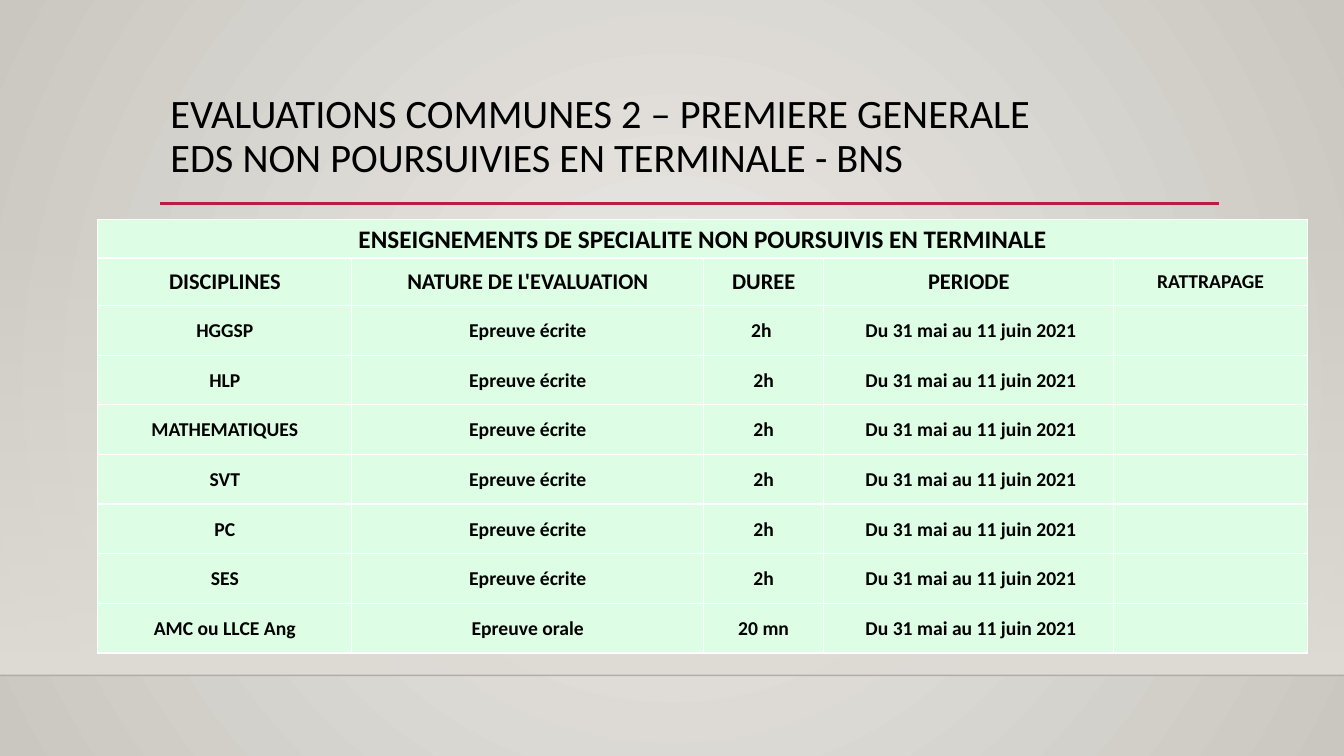
from lxml import etree
from pptx import Presentation
from pptx.dml.color import RGBColor
from pptx.enum.shapes import MSO_CONNECTOR, MSO_SHAPE
from pptx.enum.text import MSO_ANCHOR, MSO_AUTO_SIZE, PP_ALIGN
from pptx.oxml import parse_xml
from pptx.oxml.ns import nsdecls, qn
from pptx.util import Inches, Pt

SLIDE_WIDTH, SLIDE_HEIGHT = Inches(13.33), Inches(7.5)
FONT = "Calibri"
BLACK = RGBColor(0x00, 0x00, 0x00)
WHITE = RGBColor(0xFF, 0xFF, 0xFF)
CRIMSON = RGBColor(0xB7, 0x1E, 0x42)
MINT = RGBColor(0xDD, 0xFD, 0xE5)
SAND = RGBColor(0xDF, 0xDB, 0xD5)
SAND_LIGHT = RGBColor(0xEC, 0xEA, 0xE7)
SAND_DARK = RGBColor(0xCA, 0xC7, 0xC1)
FLOOR_LINE = RGBColor(0x00, 0x00, 0x01)

TITLE = "EVALUATIONS COMMUNES 2 – PREMIERE GENERALE\vEDS NON POURSUIVIES EN TERMINALE - BNS"
TABLE_TITLE = "ENSEIGNEMENTS DE SPECIALITE NON POURSUIVIS EN TERMINALE"
HEADERS = ["DISCIPLINES", "NATURE DE L'EVALUATION", "DUREE", "PERIODE", "RATTRAPAGE"]
PERIOD = " Du 31 mai au 11 juin 2021"
EXAMS = [
    ("HGGSP", "Epreuve écrite", "2h "),
    ("HLP", "Epreuve écrite", "2h"),
    ("MATHEMATIQUES", "Epreuve écrite", "2h"),
    ("SVT", "Epreuve écrite", "2h"),
    ("PC", "Epreuve écrite", "2h"),
    ("SES", "Epreuve écrite", "2h"),
    ("AMC ou LLCE Ang", "Epreuve orale", "20 mn"),
]

# Percentages of the slide's width or height
TEXT_LEFT, TEXT_WIDTH = 11.93, 78.75
FLOOR_TOP = 89.33
TABLE_BOX = (7.28, 29.07, 90, 57.33)
COLUMN_WIDTHS = [18.9, 26.18, 8.92, 21.6, 14.4]
HEADING_HEIGHTS = [5.07, 6.27]


def across(percent):
    return round(SLIDE_WIDTH * percent / 100)


def down(percent):
    return round(SLIDE_HEIGHT * percent / 100)


def box(left, top, width, height):
    return across(left), down(top), across(width), down(height)


def gradient(start, end, direction, start_alpha=100):
    """Return a two-stop gradient fill element; direction is its a:lin or a:path XML."""
    return parse_xml(
        f'<a:gradFill {nsdecls("a")} rotWithShape="1"><a:gsLst>'
        f'<a:gs pos="0"><a:srgbClr val="{start}"><a:alpha val="{start_alpha * 1000}"/></a:srgbClr></a:gs>'
        f'<a:gs pos="100000"><a:srgbClr val="{end}"/></a:gs>'
        f'</a:gsLst>{direction}</a:gradFill>')


def replace_solid_fill(parent, fill):
    parent.replace(parent.find(qn("a:solidFill")), fill)


def write_text(frame, text, size, bold=False, align=PP_ALIGN.LEFT, line_spacing=None):
    frame.text = text
    paragraph = frame.paragraphs[0]
    paragraph.alignment = align
    paragraph.line_spacing = line_spacing
    for run in paragraph.runs:
        font = run.font
        font.name, font.size, font.bold = FONT, Pt(size), bold
        font.color.rgb = BLACK


def paint_background(slide):
    slide.background.fill.solid()
    slide.background.fill.fore_color.rgb = SAND
    circle = ('<a:path path="circle"><a:fillToRect l="50000" t="50000" r="50000" b="50000"/>'
              '</a:path>')
    properties = slide.element.find(".//" + qn("p:bgPr"))
    replace_solid_fill(properties, gradient(SAND_LIGHT, SAND_DARK, circle))


def add_wall(slide):
    shape = slide.shapes.add_shape(MSO_SHAPE.RECTANGLE, *box(0, 29.47, 100, FLOOR_TOP - 29.47))
    shape.shadow.inherit = False
    shape.line.fill.background()
    shape.fill.solid()
    shape.fill.fore_color.rgb = SAND
    replace_solid_fill(shape.element.spPr,
                       gradient(SAND, SAND, '<a:lin ang="5400000" scaled="0"/>', start_alpha=0))


def add_rule(slide, left, right, top, color, width, alpha=100):
    rule = slide.shapes.add_connector(
        MSO_CONNECTOR.STRAIGHT, across(left), down(top), across(right), down(top))
    rule.line.color.rgb = color
    rule.line.width = Pt(width)
    properties = rule.element.spPr
    if alpha < 100:
        color_element = properties.find(".//" + qn("a:srgbClr"))
        etree.SubElement(color_element, qn("a:alpha"), val=str(alpha * 1000))
    etree.SubElement(properties, qn("a:effectLst"))


def place_title(slide):
    title = slide.shapes.title
    slide.shapes.element.append(title.element)
    title.left, title.top, title.width, title.height = box(TEXT_LEFT, 11.73, TEXT_WIDTH, 15.33)
    frame = title.text_frame
    write_text(frame, TITLE, 28.8, line_spacing=0.9)
    frame.word_wrap = True
    frame.auto_size = MSO_AUTO_SIZE.NONE
    frame.vertical_anchor = MSO_ANCHOR.TOP


def format_cell(cell):
    cell.margin_left = cell.margin_right = cell.margin_top = Inches(0.01)
    cell.margin_bottom = 0
    cell.vertical_anchor = MSO_ANCHOR.MIDDLE
    cell.fill.solid()
    cell.fill.fore_color.rgb = MINT
    properties = cell._tc.get_or_add_tcPr()
    for position, side in enumerate(("lnL", "lnR", "lnT", "lnB")):
        properties.insert(position, parse_xml(
            f'<a:{side} {nsdecls("a")} w="{Pt(1)}"><a:solidFill><a:srgbClr val="{WHITE}"/>'
            f'</a:solidFill><a:prstDash val="solid"/></a:{side}>'))


def add_exam_table(slide):
    rows = [[TABLE_TITLE], HEADERS] + [[*exam, PERIOD] for exam in EXAMS]
    table = slide.shapes.add_table(len(rows), len(HEADERS), *box(*TABLE_BOX)).table
    table.first_row = table.horz_banding = False
    for column, width in zip(table.columns, COLUMN_WIDTHS):
        column.width = across(width)
    exam_height = (TABLE_BOX[3] - sum(HEADING_HEIGHTS)) / len(EXAMS)
    heights = HEADING_HEIGHTS + [exam_height] * len(EXAMS)
    for row, height in zip(table.rows, heights):
        row.height = down(height)
    for cell in table.iter_cells():
        format_cell(cell)
    table.cell(0, 0).merge(table.cell(0, len(HEADERS) - 1))
    for row_index, texts in enumerate(rows):
        for column_index, text in enumerate(texts):
            size = {0: 18, 1: 16}.get(row_index, 14)
            if text == "RATTRAPAGE":
                size = 14
            write_text(table.cell(row_index, column_index).text_frame, text, size,
                       bold=True, align=PP_ALIGN.CENTER)


def main():
    presentation = Presentation()
    presentation.slide_width, presentation.slide_height = SLIDE_WIDTH, SLIDE_HEIGHT
    slide = presentation.slides.add_slide(presentation.slide_layouts[5])
    paint_background(slide)
    add_wall(slide)
    add_rule(slide, 0, 100, FLOOR_TOP, FLOOR_LINE, 1, alpha=20)
    add_rule(slide, TEXT_LEFT, TEXT_LEFT + TEXT_WIDTH, 26.93, CRIMSON, 2.5)
    place_title(slide)
    add_exam_table(slide)
    presentation.save("out.pptx")


if __name__ == "__main__":
    main()
